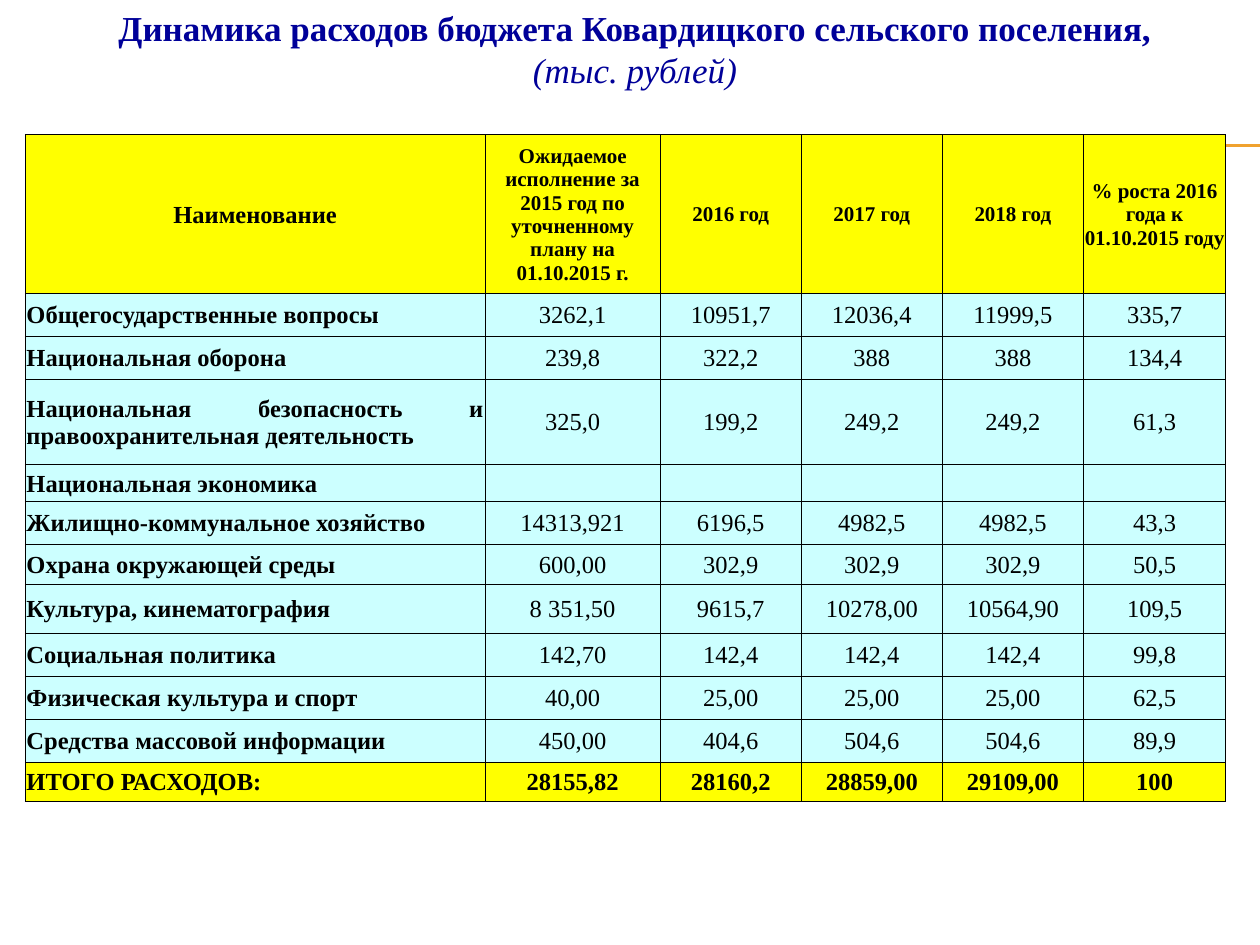
from typing import NamedTuple

from lxml import etree
from pptx import Presentation
from pptx import util as u
from pptx.dml.color import RGBColor
from pptx.enum import shapes, text
from pptx.oxml.ns import qn

FONT = "Times New Roman"
BLACK = RGBColor(0x00, 0x00, 0x00)
NAVY = RGBColor(0x00, 0x00, 0x99)
ORANGE = RGBColor(0xF0, 0xA2, 0x2E)
YELLOW = RGBColor(0xFF, 0xFF, 0x00)
CYAN = RGBColor(0xCC, 0xFF, 0xFF)

COLUMN_WIDTHS = (3.65, 1.39, 1.12, 1.12, 1.12, 1.13)


class BudgetRow(NamedTuple):
    height: float
    name: str
    values: tuple[str, ...]


HEADER = BudgetRow(1.26, "Наименование", (
    "Ожидаемое исполнение за 2015 год по уточненному плану на 01.10.2015 г.",
    "2016 год", "2017 год", "2018 год", "% роста 2016 года к 01.10.2015 году "))
EXPENSES = (
    BudgetRow(0.34, "Общегосударственные вопросы", ("3262,1", "10951,7", "12036,4", "11999,5", "335,7")),
    BudgetRow(0.34, "Национальная оборона", ("239,8", "322,2", "388", "388", "134,4")),
    BudgetRow(0.68, "Национальная безопасность и правоохранительная деятельность",
              ("325,0", "199,2", "249,2", "249,2", "61,3")),
    BudgetRow(0.29, "Национальная экономика", ("",) * 5),
    BudgetRow(0.34, "Жилищно-коммунальное хозяйство", ("14313,921", "6196,5", "4982,5", "4982,5", "43,3")),
    BudgetRow(0.32, "Охрана окружающей среды", ("600,00", "302,9", "302,9", "302,9", "50,5")),
    BudgetRow(0.39, "Культура, кинематография", ("8 351,50", "9615,7", "10278,00", "10564,90", "109,5")),
    BudgetRow(0.34, "Социальная политика", ("142,70", "142,4", "142,4", "142,4", "99,8")),
    BudgetRow(0.34, "Физическая культура и спорт", ("40,00", "25,00", "25,00", "25,00", "62,5")),
    BudgetRow(0.34, "Средства массовой информации", ("450,00", "404,6", "504,6", "504,6", "89,9")),
)
TOTAL = BudgetRow(0.31, "ИТОГО РАСХОДОВ:", ("28155,82", "28160,2", "28859,00", "29109,00", "100"))


def style_font(font, size: float, color: RGBColor, bold: bool, italic: bool = False) -> None:
    """Apply the slide typeface and the given emphasis."""
    font.name = FONT
    font.size = u.Pt(size)
    font.color.rgb = color
    font.bold = bold
    font.italic = italic


def add_rule(page, top: float) -> None:
    """Draw a thin orange rule running to the right edge."""
    rule = page.shapes.add_connector(
        shapes.MSO_CONNECTOR.STRAIGHT, u.Inches(0.56), u.Inches(top), u.Inches(10), u.Inches(top))
    rule.line.color.rgb = ORANGE
    rule.line.width = u.Pt(0.75)
    etree.SubElement(rule._element.spPr, qn("a:effectLst"))


def add_title(page) -> None:
    """Write the heading with its unit in italics."""
    box = page.shapes.add_textbox(u.Inches(0.51), u.Inches(0), u.Inches(9.06), u.Inches(0.77))
    frame = box.text_frame
    frame.word_wrap = True
    frame.auto_size = text.MSO_AUTO_SIZE.SHAPE_TO_FIT_TEXT
    para = frame.paragraphs[0]
    para.alignment = text.PP_ALIGN.CENTER
    for words, is_unit in (
        ("Динамика расходов бюджета Ковардицкого сельского поселения, ", False),
        ("(тыс. рублей)", True),
    ):
        span = para.add_run()
        span.text = words
        style_font(span.font, 20, NAVY, not is_unit, is_unit)


def add_borders(cell) -> None:
    """Outline a cell in thin black."""
    properties = cell._tc.get_or_add_tcPr()
    for position, side in enumerate(("lnL", "lnR", "lnT", "lnB")):
        border = etree.Element(qn(f"a:{side}"), w=str(u.Pt(0.5)))
        fill = etree.SubElement(border, qn("a:solidFill"))
        etree.SubElement(fill, qn("a:srgbClr"), val=str(BLACK))
        properties.insert(position, border)


def fill_cell(cell, words: str, size: float, bold: bool, alignment, color: RGBColor) -> None:
    """Write and style one table cell."""
    cell.margin_left = cell.margin_right = cell.margin_top = u.Inches(0.01)
    cell.margin_bottom = u.Inches(0)
    cell.vertical_anchor = text.MSO_ANCHOR.MIDDLE
    cell.fill.solid()
    cell.fill.fore_color.rgb = color
    add_borders(cell)
    para = cell.text_frame.paragraphs[0]
    para.text = words
    para.alignment = alignment
    for span in para.runs:
        style_font(span.font, size, BLACK, bold)
    if not words:
        etree.SubElement(para._p, qn("a:endParaRPr"), sz=str(size * 100))


def add_budget_table(page) -> None:
    """Build the expense table with its header and total."""
    rows = (HEADER, *EXPENSES, TOTAL)
    frame = page.shapes.add_table(
        len(rows), len(COLUMN_WIDTHS), u.Inches(0.2), u.Inches(1.07),
        u.Inches(sum(COLUMN_WIDTHS)), u.Inches(sum(row.height for row in rows)))
    table = frame.table
    for column, width in zip(table.columns, COLUMN_WIDTHS):
        column.width = u.Inches(width)
    for row_index, row in enumerate(rows):
        table.rows[row_index].height = u.Inches(row.height)
        is_header = row is HEADER
        highlighted = is_header or row is TOTAL
        for column_index, words in enumerate((row.name, *row.values)):
            is_name = column_index == 0
            fill_cell(
                table.cell(row_index, column_index), words,
                size=12 if is_header and not is_name else 14,
                bold=highlighted or is_name,
                alignment=text.PP_ALIGN.JUSTIFY if is_name and not is_header else text.PP_ALIGN.CENTER,
                color=YELLOW if highlighted else CYAN)


def main() -> None:
    """Create the budget slide and save it."""
    deck = Presentation()
    deck.slide_width, deck.slide_height = u.Inches(10), u.Inches(7.5)
    page = deck.slides.add_slide(deck.slide_layouts[6])
    for top in (1.15, 1.16):
        add_rule(page, top)
    add_title(page)
    add_budget_table(page)
    deck.save("out.pptx")


if __name__ == "__main__":
    main()
